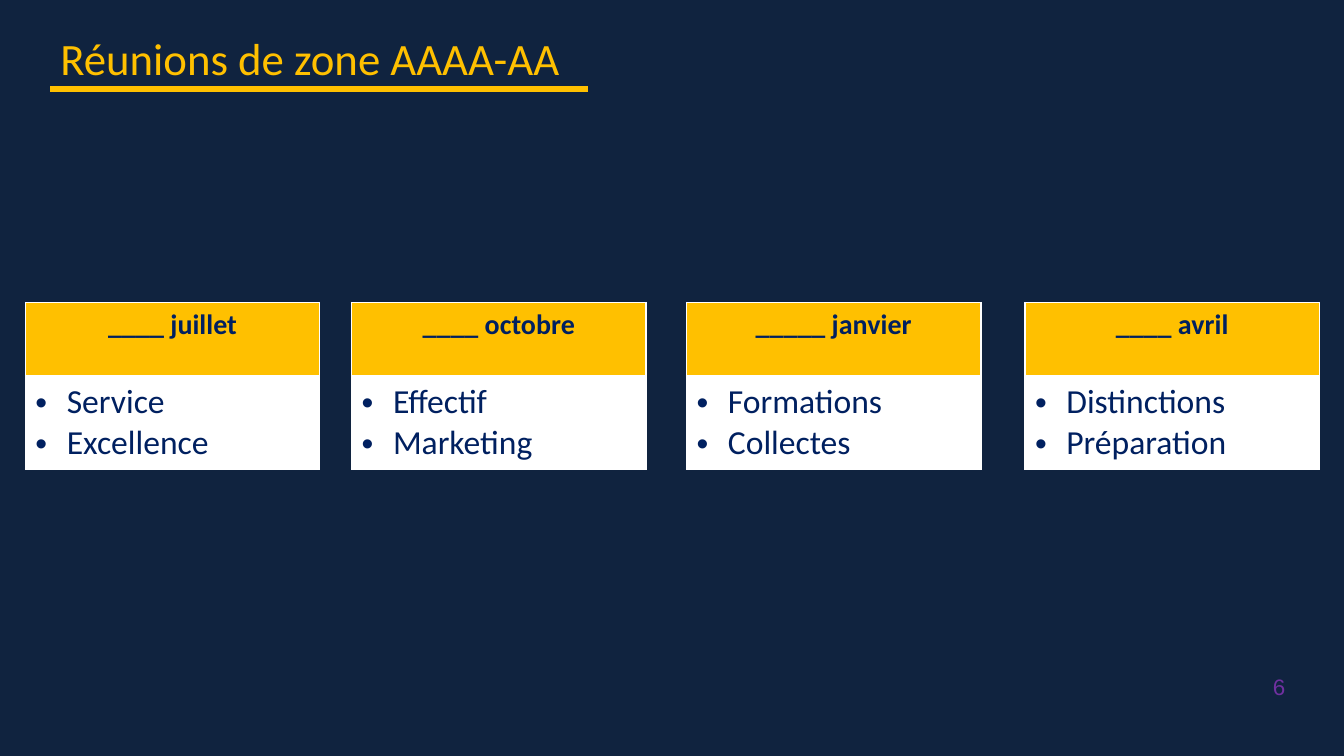
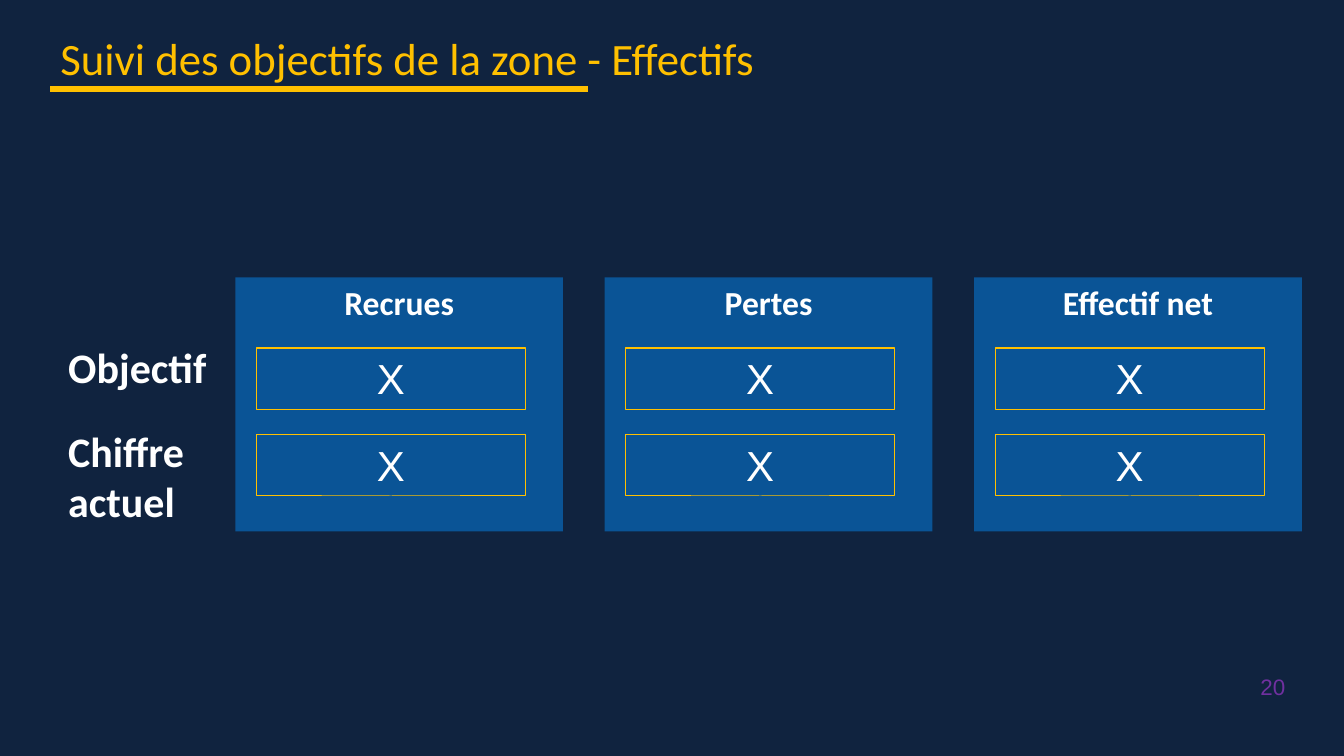
from lxml.etree import SubElement
from pptx import Presentation
from pptx.dml.color import RGBColor
from pptx.enum.shapes import MSO_CONNECTOR, MSO_SHAPE
from pptx.enum.text import MSO_ANCHOR, PP_ALIGN
from pptx.oxml.ns import qn
from pptx.util import Cm, Pt

NAVY, GOLD, BLUE = "10233F", "FFC000", "0A5496"
INK, WHITE, PURPLE = "002060", "FFFFFF", "7030A0"
HEADING_FONT, NUMBER_FONT = "Calibri", "Arial"

MEETINGS = [
    (0.64, "____ juillet", ["Service", "Excellence"]),
    (8.86, "____ octobre", ["Effectif", "Marketing"]),
    (17.3, "_____ janvier", ["Formations", "Collectes"]),
    (25.83, "____ avril", ["Distinctions", "Préparation"]),
]
ROW_LABELS = [(8.48, 1.55, "Objectif"), (10.59, 2.82, "Chiffre\vactuel")]
PANELS = [("Recrues", ["X", "X"]), ("Pertes", ["X", "X"]), ("Effectif net", ["X", "X"])]
PANEL_LEFT, PANEL_TOP, PANEL_STEP = 5.93, 6.99, 9.31


def color(hex_value):
    return RGBColor.from_string(hex_value)


def write(text_frame, lines, size, hex_color, font=HEADING_FONT, bold=False,
          align=PP_ALIGN.LEFT):
    """Fill a text frame with one paragraph per line and return the paragraphs."""
    text_frame.word_wrap = True
    for index, line in enumerate(lines):
        paragraph = text_frame.add_paragraph() if index else text_frame.paragraphs[0]
        paragraph.text = line
        paragraph.alignment = align
        paragraph.font.name = font
        paragraph.font.size = Pt(size)
        paragraph.font.bold = bold
        paragraph.font.color.rgb = color(hex_color)
    return text_frame.paragraphs


def add_text(slide, left, top, width, height, text, size, hex_color, **style):
    box = slide.shapes.add_textbox(Cm(left), Cm(top), Cm(width), Cm(height))
    write(box.text_frame, [text], size, hex_color, **style)
    return box.text_frame


def add_box(shapes, left, top, width, height, text, size, fill=None, line=None, **style):
    box = shapes.add_shape(MSO_SHAPE.RECTANGLE, Cm(left), Cm(top), Cm(width), Cm(height))
    box.shadow.inherit = False
    if fill:
        box.fill.solid()
        box.fill.fore_color.rgb = color(fill)
    else:
        box.fill.background()
    if line:
        box.line.color.rgb = color(line)
        box.line.width = Pt(0.75)
    else:
        box.line.fill.background()
    box.text_frame.vertical_anchor = MSO_ANCHOR.TOP
    write(box.text_frame, [text], size, WHITE, align=PP_ALIGN.CENTER, **style)


def add_bullet(paragraph, indent=0.79):
    properties = paragraph._p.get_or_add_pPr()
    properties.set("marL", str(Cm(indent)))
    properties.set("indent", str(-Cm(indent)))
    SubElement(properties, qn("a:buFont")).set("typeface", "Arial")
    SubElement(properties, qn("a:buChar")).set("char", "•")


def style_cell(cell, fill, bottom_width):
    """Give a cell its fill and white borders."""
    properties = cell._tc.get_or_add_tcPr()
    for side, width in (("lnL", 1), ("lnR", 1), ("lnT", 1), ("lnB", bottom_width)):
        border = SubElement(properties, qn(f"a:{side}"), w=str(Pt(width)))
        border_fill = SubElement(border, qn("a:solidFill"))
        SubElement(border_fill, qn("a:srgbClr"), val=WHITE)
    cell.fill.solid()
    cell.fill.fore_color.rgb = color(fill)


def add_titled_slide(presentation, title, number):
    slide = presentation.slides.add_slide(presentation.slide_layouts[6])
    number_frame = add_text(slide, 30.84, 16.84, 1.55, 0.94, number, 16, PURPLE,
                            font=NUMBER_FONT, align=PP_ALIGN.RIGHT)
    number_frame.margin_left = number_frame.margin_right = 0
    number_frame.vertical_anchor = MSO_ANCHOR.MIDDLE
    add_text(slide, 1.27, 0.64, 19.48, 1.63, title, 32, GOLD)
    rule = slide.shapes.add_connector(MSO_CONNECTOR.STRAIGHT,
                                      Cm(1.27), Cm(2.25), Cm(14.82), Cm(2.25))
    rule.line.color.rgb = color(GOLD)
    rule.line.width = Pt(4.5)
    SubElement(rule._element.spPr, qn("a:effectLst"))
    return slide


def add_meeting_table(slide, left, top, date, topics):
    width, header_height, body_height = 7.42, 1.88, 2.32
    table = slide.shapes.add_table(2, 1, Cm(left), Cm(top), Cm(width),
                                   Cm(header_height + body_height)).table
    table.first_row = table.horz_banding = False
    table.rows[0].height = Cm(header_height)
    table.rows[1].height = Cm(body_height)
    header, body = table.cell(0, 0), table.cell(1, 0)
    style_cell(header, GOLD, 3)
    style_cell(body, WHITE, 1)
    write(header.text_frame, [date], 20, INK, bold=True, align=PP_ALIGN.CENTER)
    for paragraph in write(body.text_frame, topics, 24, INK):
        add_bullet(paragraph)


def add_goal_panel(slide, left, top, heading, values):
    group = slide.shapes.add_group_shape()
    add_box(group.shapes, left, top, 8.26, 6.4, heading, 24, fill=BLUE, bold=True)
    for row, value in enumerate(values):
        add_box(group.shapes, left + 0.53, top + 1.78 + 2.18 * row, 6.78, 1.55,
                value, 30, line=GOLD, font=NUMBER_FONT)


def build_meetings_slide(presentation):
    slide = add_titled_slide(presentation, "Réunions de zone AAAA-AA", "6")
    for left, date, topics in MEETINGS:
        add_meeting_table(slide, left, 7.62, date, topics)


def build_goals_slide(presentation):
    slide = add_titled_slide(presentation, "Suivi des objectifs de la zone - Effectifs", "20")
    for top, height, label in ROW_LABELS:
        add_text(slide, 1.47, top, 4.45, height, label, 30, WHITE, bold=True)
    for column, (heading, values) in enumerate(PANELS):
        add_goal_panel(slide, PANEL_LEFT + PANEL_STEP * column, PANEL_TOP, heading, values)


def main():
    presentation = Presentation()
    presentation.slide_width, presentation.slide_height = Cm(33.87), Cm(19.05)
    background = presentation.slide_master.background.fill
    background.solid()
    background.fore_color.rgb = color(NAVY)
    build_meetings_slide(presentation)
    build_goals_slide(presentation)
    presentation.save("out.pptx")


if __name__ == "__main__":
    main()
